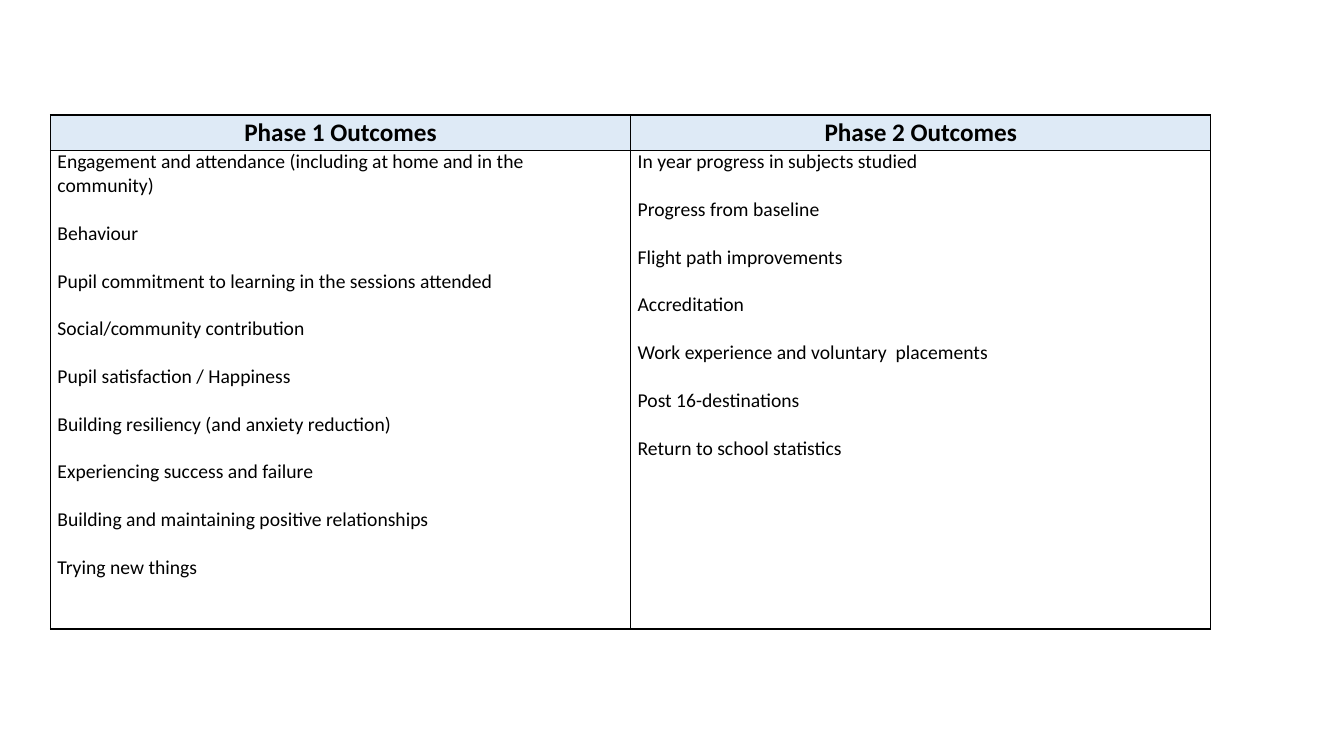
from lxml import etree
from pptx import Presentation
from pptx.dml.color import RGBColor
from pptx.enum.text import MSO_ANCHOR, PP_ALIGN
from pptx.oxml.ns import qn
from pptx.util import Inches, Pt

FONT = "Calibri"
BLACK, HEADER_BLUE = "000000", "DEEAF6"
HEADER_HEIGHT = 0.35
ITEM_GAP = 17.05

OUTCOMES = {
    "Phase 1 Outcomes": [
        "Engagement and attendance (including at home and in the community)",
        "Behaviour",
        "Pupil commitment to learning in the sessions attended",
        "Social/community contribution",
        "Pupil satisfaction / Happiness",
        "Building resiliency (and anxiety reduction)",
        "Experiencing success and failure",
        "Building and maintaining positive relationships",
        "Trying new things",
    ],
    "Phase 2 Outcomes": [
        "In year progress in subjects studied",
        "Progress from baseline",
        "Flight path improvements",
        "Accreditation",
        "Work experience and voluntary  placements",
        "Post 16-destinations",
        "Return to school statistics",
    ],
}


def color(hex_string):
    return RGBColor.from_string(hex_string)


def add_borders(cell):
    """Outline all four sides; borders must precede the cell's fill."""
    properties = cell._tc.get_or_add_tcPr()
    for index, side in enumerate(("a:lnL", "a:lnR", "a:lnT", "a:lnB")):
        line = etree.Element(qn(side), w=str(Pt(1)))
        fill = etree.SubElement(line, qn("a:solidFill"))
        etree.SubElement(fill, qn("a:srgbClr"), val=BLACK)
        properties.insert(index, line)


def format_cell(cell, lines, size, bold=False):
    cell.margin_left = cell.margin_right = Inches(0.07)
    cell.margin_top = cell.margin_bottom = 0
    cell.vertical_anchor = MSO_ANCHOR.TOP
    cell.text_frame.text = "\n".join(lines)
    for index, paragraph in enumerate(cell.text_frame.paragraphs):
        if index:
            paragraph.space_before = Pt(ITEM_GAP)
        font = paragraph.runs[0].font
        font.name, font.size, font.bold = FONT, Pt(size), bold
        font.color.rgb = color(BLACK)
    add_borders(cell)


def add_outcomes_table(slide, left, top, width, height):
    frame = slide.shapes.add_table(2, len(OUTCOMES), left, top, width, height)
    table = frame.table
    table.first_row = table.horz_banding = False
    table.rows[0].height = Inches(HEADER_HEIGHT)
    table.rows[1].height = height - Inches(HEADER_HEIGHT)
    for column, (heading, items) in enumerate(OUTCOMES.items()):
        header, body = table.cell(0, column), table.cell(1, column)
        header.fill.solid()
        header.fill.fore_color.rgb = color(HEADER_BLUE)
        body.fill.background()
        format_cell(header, [heading], 18, bold=True)
        title = header.text_frame.paragraphs[0]
        title.alignment = PP_ALIGN.CENTER
        title.line_spacing = 1.07
        format_cell(body, items, 14)


def main():
    presentation = Presentation()
    presentation.slide_width = Inches(13.33)
    presentation.slide_height = Inches(7.5)
    slide = presentation.slides.add_slide(presentation.slide_layouts[6])
    add_outcomes_table(slide, Inches(0.5), Inches(1.14), Inches(11.51), Inches(5.1))
    presentation.save("out.pptx")


if __name__ == "__main__":
    main()
